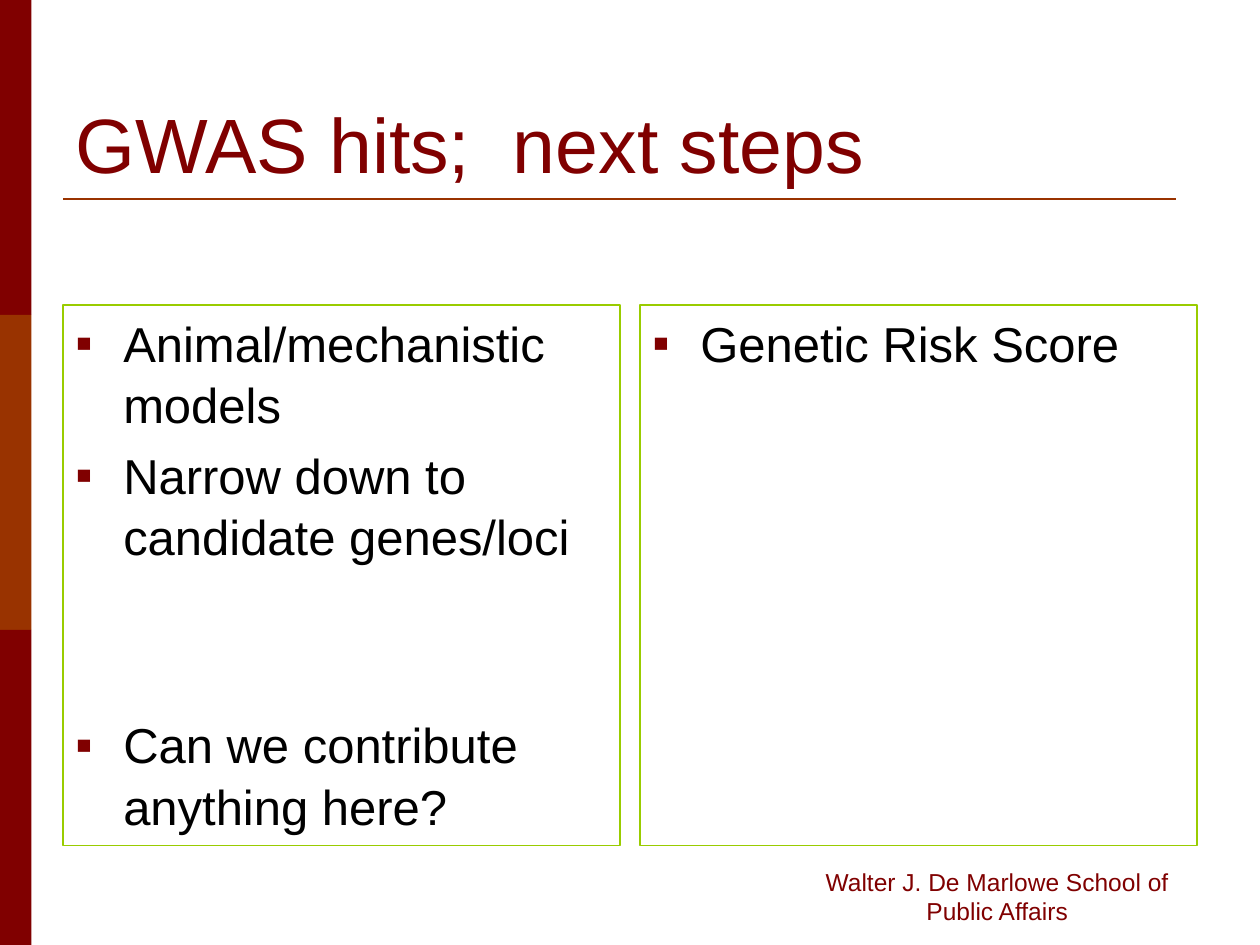
from dataclasses import dataclass

from lxml import etree
from pptx import Presentation
from pptx.dml.color import RGBColor
from pptx.enum.shapes import MSO_CONNECTOR, MSO_SHAPE
from pptx.enum.text import MSO_ANCHOR, MSO_AUTO_SIZE, PP_ALIGN
from pptx.oxml.ns import qn
from pptx.util import Inches, Pt

RECTANGLE = MSO_SHAPE.RECTANGLE
STRAIGHT = MSO_CONNECTOR.STRAIGHT
TOP, BOTTOM = MSO_ANCHOR.TOP, MSO_ANCHOR.BOTTOM
NO_AUTOFIT = MSO_AUTO_SIZE.NONE
LEFT, CENTER = PP_ALIGN.LEFT, PP_ALIGN.CENTER


@dataclass(frozen=True)
class Theme:
    font: str = "Arial"
    maroon: str = "800000"
    rust: str = "993300"
    green: str = "99CC00"
    black: str = "000000"
    title_size: int = 44
    body_size: int = 28
    footer_size: int = 14
    bullet: str = "▪"
    indent: float = 0.38
    line_spacing: float = 1.04


THEME = Theme()
WIDTH, HEIGHT = 10, 7.5
MARGIN = 0.05 * WIDTH
CONTENT_WIDTH = WIDTH - 2 * MARGIN
GUTTER = 0.16
COLUMN_WIDTH = (CONTENT_WIDTH - GUTTER) / 2
PANEL_TOP, PANEL_HEIGHT = 2.42, 4.29
BAND_WIDTH = 0.25
BAND_COLORS = (THEME.maroon, THEME.rust, THEME.maroon)
ITEM_GAP = 0.2 * THEME.body_size
SECTION_GAP = 84
COLUMNS = (
    (
        ("Animal/mechanistic models", ITEM_GAP),
        ("Narrow down to candidate genes/loci", ITEM_GAP),
        ("Can we contribute anything here?", SECTION_GAP),
    ),
    (("Genetic Risk Score", ITEM_GAP),),
)


def color(value):
    return RGBColor.from_string(value)


def apply_format(target, values):
    for name, value in values.items():
        setattr(target, name, value)


def write_text(paragraph, text, size, text_color, **layout):
    apply_format(paragraph, layout)
    run = paragraph.add_run()
    run.text = text
    apply_format(run.font, {"name": THEME.font, "size": Pt(size), "bold": False})
    run.font.color.rgb = color(text_color)


def format_frame(frame, anchor):
    values = {"word_wrap": True, "auto_size": NO_AUTOFIT, "vertical_anchor": anchor}
    apply_format(frame, values)


def add_rectangle(slide, left, top, width, height):
    shape = slide.shapes.add_shape(
        RECTANGLE, Inches(left), Inches(top), Inches(width), Inches(height)
    )
    shape.shadow.inherit = False
    return shape


def add_side_bands(slide):
    band_height = HEIGHT / len(BAND_COLORS)
    for row, band_color in enumerate(BAND_COLORS):
        band = add_rectangle(slide, 0, row * band_height, BAND_WIDTH, band_height)
        band.fill.solid()
        band.fill.fore_color.rgb = color(band_color)
        band.line.fill.background()


def add_title_rule(slide):
    rule = slide.shapes.add_connector(
        STRAIGHT, Inches(MARGIN), Inches(1.58), Inches(9.33), Inches(1.58)
    )
    rule.line.color.rgb = color(THEME.rust)
    rule.line.width = Pt(1.5)
    etree.SubElement(rule._element.spPr, qn("a:effectLst"))


def set_title(slide, text):
    title = slide.shapes.title
    apply_format(title, {
        "left": Inches(MARGIN),
        "top": Inches(0.3),
        "width": Inches(CONTENT_WIDTH),
        "height": Inches(1.25),
    })
    format_frame(title.text_frame, BOTTOM)
    write_text(title.text_frame.paragraphs[0], text, THEME.title_size,
               THEME.maroon, alignment=LEFT)


def add_bullet(paragraph):
    properties = paragraph._p.get_or_add_pPr()
    indent = Inches(THEME.indent)
    properties.set("marL", str(indent))
    properties.set("indent", str(-indent))
    bullet_color = etree.SubElement(properties, qn("a:buClr"))
    etree.SubElement(bullet_color, qn("a:srgbClr"), val=THEME.maroon)
    etree.SubElement(properties, qn("a:buFont"), typeface=THEME.font)
    etree.SubElement(properties, qn("a:buChar"), char=THEME.bullet)


def add_bullet_panel(slide, column, items):
    left = MARGIN + column * (COLUMN_WIDTH + GUTTER)
    panel = add_rectangle(slide, left, PANEL_TOP, COLUMN_WIDTH, PANEL_HEIGHT)
    panel.fill.background()
    panel.line.color.rgb = color(THEME.green)
    panel.line.width = Pt(0.75)
    frame = panel.text_frame
    format_frame(frame, TOP)
    for index, (text, gap) in enumerate(items):
        paragraph = frame.add_paragraph() if index else frame.paragraphs[0]
        write_text(paragraph, text, THEME.body_size, THEME.black, alignment=LEFT,
                   space_before=Pt(gap), line_spacing=THEME.line_spacing)
        add_bullet(paragraph)


def add_footer(slide, text):
    width = 3.17
    footer = slide.shapes.add_textbox(
        Inches(WIDTH - MARGIN - width), Inches(6.83), Inches(width), Inches(0.5)
    )
    format_frame(footer.text_frame, TOP)
    write_text(footer.text_frame.paragraphs[0], text, THEME.footer_size,
               THEME.maroon, alignment=CENTER)


def main():
    presentation = Presentation()
    presentation.slide_width = Inches(WIDTH)
    presentation.slide_height = Inches(HEIGHT)
    slide = presentation.slides.add_slide(presentation.slide_layouts[5])
    add_side_bands(slide)
    add_title_rule(slide)
    set_title(slide, "GWAS hits;  next steps")
    for column, items in enumerate(COLUMNS):
        add_bullet_panel(slide, column, items)
    add_footer(slide, "Walter J. De Marlowe School of Public Affairs")
    presentation.save("out.pptx")


if __name__ == "__main__":
    main()
